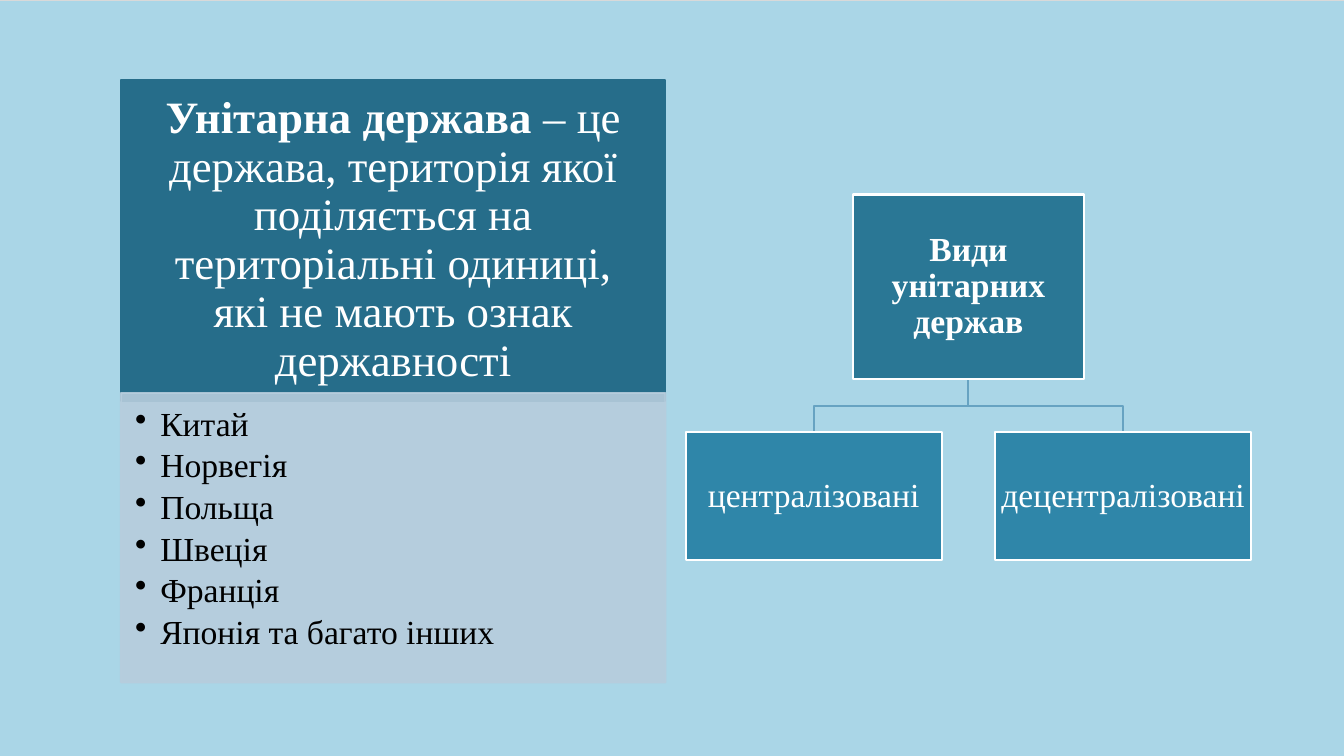
from lxml.etree import SubElement
from pptx import Presentation
from pptx.dml.color import RGBColor
from pptx.enum.dml import MSO_PATTERN
from pptx.enum.shapes import MSO_SHAPE
from pptx.enum.text import MSO_ANCHOR, PP_ALIGN
from pptx.oxml.ns import qn
from pptx.util import Inches, Pt

FONT = "Times New Roman"
COLORS = {
    "sky": "AAD6E7", "grey": "D9D9D9", "header": "266D8A", "list": "B7CDDD",
    "root": "2A7795", "branch": "2F86A9", "link": "67A3C2",
    "white": "FFFFFF", "black": "000000",
}
COUNTRIES = ["Китай", "Норвегія", "Польща", "Швеція", "Франція", "Японія та багато інших"]
ROOT = (8.46, 1.93, 2.29, 1.83)
BRANCHES = ["централізовані", "децентралізовані"]
BRANCH_LEFT, BRANCH_TOP, BRANCH_STEP = 6.8, 4.29, 3.07
BRANCH_SIZE = (2.54, 1.27)


def rgb(name):
    """Return the named colour."""
    return RGBColor.from_string(COLORS[name])


def add_box(page, area, fill, line, margins, anchor=MSO_ANCHOR.MIDDLE):
    """Add a filled rectangle prepared for text."""
    box = page.shapes.add_shape(MSO_SHAPE.RECTANGLE, *map(Inches, area))
    box.shadow.inherit = False
    box.fill.solid()
    box.fill.fore_color.rgb = rgb(fill)
    box.line.color.rgb = rgb(line)
    box.line.width = Pt(1.5)
    frame = box.text_frame
    frame.word_wrap = True
    frame.vertical_anchor = anchor
    (frame.margin_left, frame.margin_top,
     frame.margin_right, frame.margin_bottom) = map(Inches, margins)
    return box


def write(para, texts, size, color="white", bold=False, align=PP_ALIGN.CENTER):
    """Write runs into a paragraph, the first one bold on request."""
    para.alignment = align
    para.line_spacing = 0.9
    for index, text in enumerate(texts):
        span = para.add_run()
        span.text = text
        span.font.name = FONT
        span.font.size = Pt(size)
        span.font.bold = bold and index == 0
        span.font.color.rgb = rgb(color)


def add_bullet(para):
    """Give a paragraph a hanging bullet."""
    props = para._p.get_or_add_pPr()
    props.set("marL", str(Inches(0.25)))
    props.set("indent", str(-Inches(0.25)))
    SubElement(props, qn("a:buChar")).set("char", "•")


def set_opacity(box, percent):
    """Make the fill and line of a box translucent."""
    for color in box._element.spPr.iter(qn("a:srgbClr")):
        SubElement(color, qn("a:alpha")).set("val", str(percent * 1000))


def add_definition(page):
    """Add the definition header."""
    box = add_box(page, (1.2, 0.79, 5.4, 3.19), "header", "header", (0.25, 0.14, 0.25, 0.14))
    texts = ["Унітарна держава ",
             "– це держава, територія якої поділяється на територіальні одиниці, "
             "які не мають ознак державності"]
    write(box.text_frame.paragraphs[0], texts, 32, bold=True)


def add_countries(page):
    """Add the bulleted list of countries."""
    box = add_box(page, (1.2, 3.9, 5.4, 2.87), "list", "list",
                  (0.14, 0.14, 0.19, 0.21), MSO_ANCHOR.TOP)
    set_opacity(box, 90)
    frame = box.text_frame
    for index, country in enumerate(COUNTRIES):
        para = frame.add_paragraph() if index else frame.paragraphs[0]
        write(para, [country], 24, "black", align=PP_ALIGN.LEFT)
        para.space_after = Pt(3.8)
        add_bullet(para)


def add_link(page, start, end):
    """Add an elbow line that bends halfway down."""
    middle = (start[1] + end[1]) / 2
    points = [start, (start[0], middle), (end[0], middle), end]
    points = [(Inches(x), Inches(y)) for x, y in points]
    builder = page.shapes.build_freeform(*points[0])
    builder.add_line_segments(points[1:], close=False)
    link = builder.convert_to_shape()
    link.shadow.inherit = False
    link.fill.background()
    link.line.color.rgb = rgb("link")
    link.line.width = Pt(1.5)


def add_node(page, area, fill, text, bold=False):
    """Add one node of the hierarchy."""
    box = add_box(page, area, fill, "white", (0.02,) * 4)
    write(box.text_frame.paragraphs[0], [text], 24, bold=bold)


def add_hierarchy(page):
    """Add the root node, its branches and the links."""
    left, top, width, height = ROOT
    lefts = [BRANCH_LEFT + index * BRANCH_STEP for index in range(len(BRANCHES))]
    for branch_left in lefts:
        add_link(page, (left + width / 2, top + height),
                 (branch_left + BRANCH_SIZE[0] / 2, BRANCH_TOP))
    add_node(page, ROOT, "root", "Види унітарних держав", bold=True)
    for branch_left, text in zip(lefts, BRANCHES):
        add_node(page, (branch_left, BRANCH_TOP, *BRANCH_SIZE), "branch", text)


def main():
    """Build and save the slide."""
    deck = Presentation()
    deck.slide_width, deck.slide_height = Inches(13.33), Inches(7.5)
    page = deck.slides.add_slide(deck.slide_layouts[6])
    fill = page.background.fill
    fill.patterned()
    fill.pattern = MSO_PATTERN.DARK_HORIZONTAL
    fill.fore_color.rgb = rgb("sky")
    fill.back_color.rgb = rgb("grey")
    add_definition(page)
    add_countries(page)
    add_hierarchy(page)
    deck.save("out.pptx")


if __name__ == "__main__":
    main()
